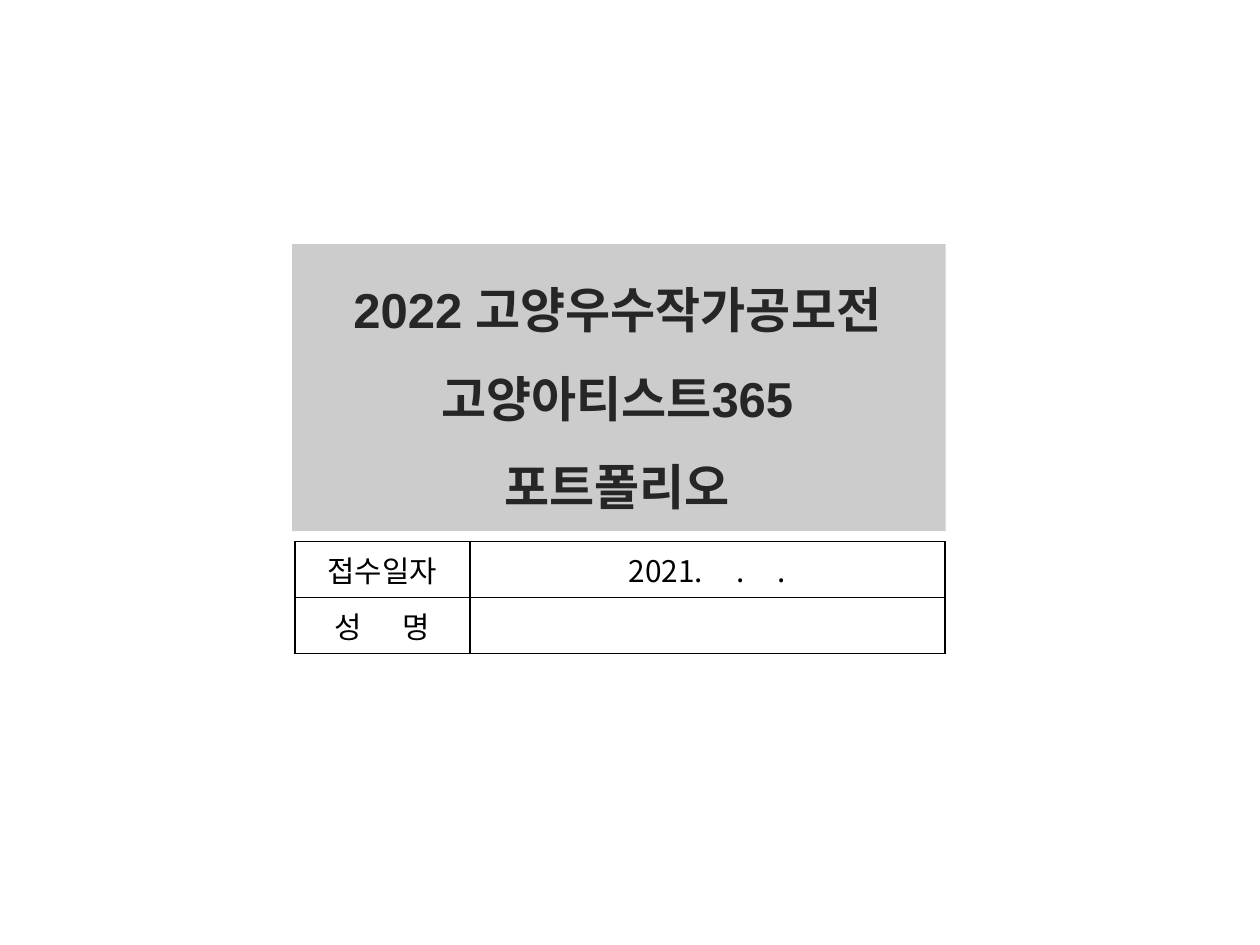
"""Build the portfolio cover slide with its title panel and receipt table."""
from lxml.etree import SubElement as Sub
from pptx import Presentation
from pptx.dml.color import RGBColor as RGB
from pptx.enum.shapes import MSO_SHAPE as SHAPE
from pptx.enum.text import MSO_ANCHOR as ANCHOR, MSO_AUTO_SIZE as AUTO, PP_ALIGN as ALIGN
from pptx.oxml.ns import qn
from pptx.util import Pt

COLORS = {"ink": "000000", "title": "262626"}
KOREAN = "Noto Sans CJK KR"
TITLE = ["2022 고양우수작가공모전", "고양아티스트365", "포트폴리오"]
ROWS = [[("접수일자", 0), ("2021. . .", 15.2)], [("성 명", 19), ("", 0)]]
COL_WIDTHS = [100, 271.5]
ROW_HEIGHT = 28


def write(p, text, size=17, font=KOREAN, color="ink", bold=False, spacing=1.0, gap=0):
    p.alignment = ALIGN.CENTER
    p.line_spacing = spacing
    p.font.size = Pt(size)
    words = text.split(" ") if gap else [text]
    pieces = [words[0]]
    for word in words[1:]:
        pieces += [" ", word]
    for piece in filter(None, pieces):
        r = p.add_run()
        r.text = piece
        r.font.size, r.font.name, r.font.bold = Pt(size), font, bold
        r.font.color.rgb = RGB.from_string(COLORS[color])
        rpr = r.font._element
        Sub(rpr, qn("a:ea"), typeface=KOREAN)
        if piece == " ":
            rpr.set("spc", str(round(gap * 100)))


def add_title(s):
    title = s.shapes.title
    title.left, title.top, title.width, title.height = Pt(167), Pt(139.5), Pt(371.5), Pt(177)
    tf = title.text_frame
    tf.word_wrap, tf.auto_size, tf.vertical_anchor = True, AUTO.NONE, ANCHOR.TOP
    for i, line in enumerate(TITLE):
        p = tf.add_paragraph() if i else tf.paragraphs[0]
        write(p, line, size=28, font="Arial", color="title", bold=True, spacing=1.5)


def add_panel(s):
    sp = s.shapes.add_shape(SHAPE.RECTANGLE, Pt(167), Pt(139.5), Pt(373.5), Pt(164))
    sp.shadow.inherit = False
    sp.line.fill.background()
    sp.fill.solid()
    sp.fill.fore_color.rgb = RGB.from_string(COLORS["ink"])
    Sub(sp.element.find(".//" + qn("a:srgbClr")), qn("a:alpha"), val="20000")
    s.shapes.title.element.addprevious(sp.element)


def style_cell(cell):
    tcpr = cell._tc.get_or_add_tcPr()
    for side in ("lnL", "lnR", "lnT", "lnB"):
        ln = Sub(tcpr, qn("a:" + side), w=str(Pt(1)))
        Sub(Sub(ln, qn("a:solidFill")), qn("a:srgbClr"), val=COLORS["ink"])
    cell.fill.background()


def add_table(s):
    frame = s.shapes.add_table(len(ROWS), len(COL_WIDTHS), Pt(168.5), Pt(309.5),
                               Pt(sum(COL_WIDTHS)), Pt(ROW_HEIGHT * len(ROWS)))
    table = frame.table
    table.first_row = table.horz_banding = False
    for col, width in zip(table.columns, COL_WIDTHS):
        col.width = Pt(width)
    for row, values in zip(table.rows, ROWS):
        row.height = Pt(ROW_HEIGHT)
        for cell, (text, gap) in zip(row.cells, values):
            style_cell(cell)
            write(cell.text_frame.paragraphs[0], text, gap=gap)


def main():
    prs = Presentation()
    prs.slide_width, prs.slide_height = Pt(720), Pt(540)
    s = prs.slides.add_slide(prs.slide_layouts[5])
    add_title(s)
    add_panel(s)
    add_table(s)
    prs.save("out.pptx")


if __name__ == "__main__":
    main()
